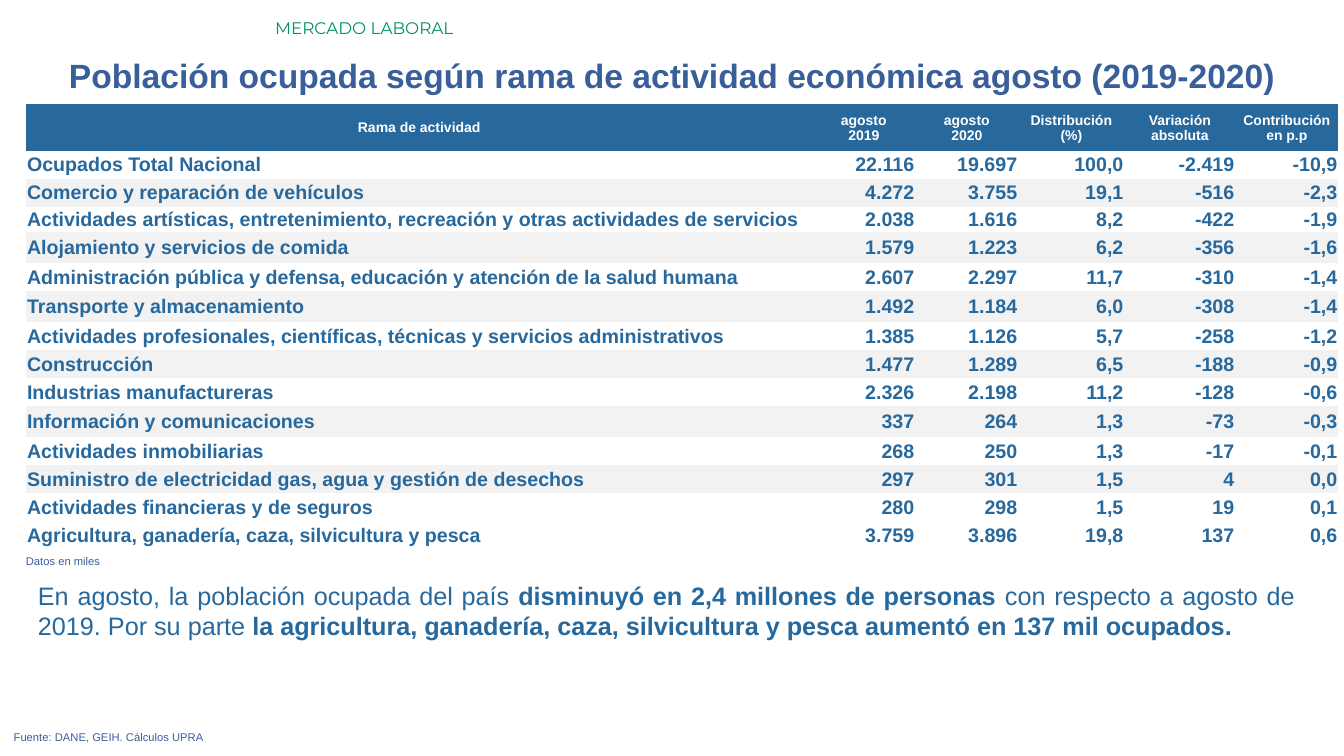
"""Build the slide on employed population by branch of economic activity."""
import pptx
import pptx.dml.color
import pptx.enum.text
import pptx.oxml.ns
import pptx.util

Pt = pptx.util.Pt
RGBColor = pptx.dml.color.RGBColor
ALIGN = pptx.enum.text.PP_ALIGN

GREEN = RGBColor(0x00, 0x92, 0x67)
INDIGO = RGBColor(0x39, 0x5F, 0x9B)
BLUE = RGBColor(0x27, 0x68, 0x9D)
WHITE = RGBColor(0xFF, 0xFF, 0xFF)
BAND = RGBColor(0xF2, 0xF2, 0xF2)
NO_STYLE = "{2D5ABB26-0587-4C30-8999-92F81FD0307C}"

SECTION = "MERCADO LABORAL"
TITLE = "Población ocupada según rama de actividad económica agosto (2019-2020)"
UNITS = "Datos en miles"
SUMMARY = (
    "En agosto, la población ocupada del país **disminuyó en 2,4 millones de personas **"
    "con respecto a agosto de 2019. Por su parte **la agricultura, ganadería, caza, "
    "silvicultura y pesca aumentó en 137 mil ocupados.**"
)
SOURCE = "Fuente: DANE, GEIH. Cálculos UPRA"

HEADER = ("Rama de actividad", "agosto\v2019", "agosto\v2020",
          "Distribución\n(%)", "Variación\nabsoluta", "Contribución\nen p.p")
BRANCHES = [
    ("Ocupados Total Nacional", "22.116", "19.697", "100,0", "-2.419", "-10,9"),
    ("Comercio y reparación de vehículos", "4.272", "3.755", "19,1", "-516", "-2,3"),
    ("Actividades artísticas, entretenimiento, recreación y otras actividades de servicios",
     "2.038", "1.616", "8,2", "-422", "-1,9"),
    ("Alojamiento y servicios de comida", "1.579", "1.223", "6,2", "-356", "-1,6"),
    ("Administración pública y defensa, educación y atención de la salud humana",
     "2.607", "2.297", "11,7", "-310", "-1,4"),
    ("Transporte y almacenamiento", "1.492", "1.184", "6,0", "-308", "-1,4"),
    ("Actividades profesionales, científicas, técnicas y servicios administrativos",
     "1.385", "1.126", "5,7", "-258", "-1,2"),
    ("Construcción", "1.477", "1.289", "6,5", "-188", "-0,9"),
    ("Industrias manufactureras", "2.326", "2.198", "11,2", "-128", "-0,6"),
    ("Información y comunicaciones", "337", "264", "1,3", "-73", "-0,3"),
    ("Actividades inmobiliarias", "268", "250", "1,3", "-17", "-0,1"),
    ("Suministro de electricidad gas, agua y gestión de desechos",
     "297", "301", "1,5", "4", "0,0"),
    ("Actividades financieras y de seguros", "280", "298", "1,5", "19", "0,1"),
    ("Agricultura, ganadería, caza, silvicultura y pesca",
     "3.759", "3.896", "19,8", "137", "0,6"),
]
COLUMN_WIDTHS = (561.6, 73.6, 73.6, 75.8, 79.2, 73.6)
ROW_HEIGHT = 20
SPECIAL_HEIGHTS = {0: 33, 3: 18, 4: 22.2, 6: 22.2, 10: 22.2}
LAST_BAND = 12


def write_text(frame, text, *, size, color, align=ALIGN.LEFT, bold=False, font="Arial"):
    """Fill a frame; newline splits paragraphs, \\v breaks lines, ** toggles bold."""
    for number, line in enumerate(text.split("\n")):
        paragraph = frame.add_paragraph() if number else frame.paragraphs[0]
        paragraph.alignment = align
        for part, piece in enumerate(line.split("\v")):
            if part:
                paragraph.add_line_break()
            for index, words in enumerate(piece.split("**")):
                if words:
                    run = paragraph.add_run()
                    run.text = words
                    run.font.name = font
                    run.font.size = Pt(size)
                    run.font.bold = bold or index % 2 == 1
                    run.font.color.rgb = color


def add_text(slide, bounds, text, **style):
    """Place a wrapping text box at left, top, width, height in points."""
    frame = slide.shapes.add_textbox(*map(Pt, bounds)).text_frame
    frame.word_wrap = True
    frame.auto_size = pptx.enum.text.MSO_AUTO_SIZE.SHAPE_TO_FIT_TEXT
    write_text(frame, text, **style)


def add_branch_table(slide, left, top):
    """Add the table of branches with its header and grey bands."""
    rows = [HEADER] + BRANCHES
    heights = [SPECIAL_HEIGHTS.get(number, ROW_HEIGHT) for number in range(len(rows))]
    graphic = slide.shapes.add_table(
        len(rows), len(HEADER), Pt(left), Pt(top), Pt(sum(COLUMN_WIDTHS)), Pt(sum(heights)))
    table = graphic.table
    table.first_row = table.horz_banding = False
    graphic.element.find(".//" + pptx.oxml.ns.qn("a:tableStyleId")).text = NO_STYLE
    for column, width in zip(table.columns, COLUMN_WIDTHS):
        column.width = Pt(width)
    for number, (values, height) in enumerate(zip(rows, heights)):
        table.rows[number].height = Pt(height)
        for position, value in enumerate(values):
            cell = table.cell(number, position)
            cell.margin_left = cell.margin_top = cell.margin_right = Pt(0.72)
            cell.margin_bottom = 0
            cell.vertical_anchor = pptx.enum.text.MSO_ANCHOR.MIDDLE
            if number == 0:
                size, color, align, fill = 10, WHITE, ALIGN.CENTER, BLUE
            else:
                size, color = 14, BLUE
                align = ALIGN.RIGHT if position else ALIGN.LEFT
                fill = BAND if number % 2 == 0 and number <= LAST_BAND else None
            if fill is None:
                cell.fill.background()
            else:
                cell.fill.solid()
                cell.fill.fore_color.rgb = fill
            write_text(cell.text_frame, value, size=size, color=color, align=align, bold=True)


def main():
    """Build and save the slide."""
    deck = pptx.Presentation()
    deck.slide_width, deck.slide_height = Pt(960), Pt(540)
    slide = deck.slides.add_slide(deck.slide_layouts[6])
    add_text(slide, (189.4, 9.4, 770.6, 21.6), SECTION, size=12, color=GREEN, font="Montserrat")
    add_text(slide, (0, 36, 960, 36), TITLE, size=24, color=INDIGO, align=ALIGN.CENTER, bold=True)
    add_text(slide, (20, 411, 912, 51), SUMMARY, size=18, color=BLUE, align=ALIGN.JUSTIFY)
    add_text(slide, (2.7, 518, 930, 17), SOURCE, size=8, color=INDIGO, align=ALIGN.JUSTIFY)
    add_branch_table(slide, 18.6, 74.6)
    add_text(slide, (11.4, 392.2, 930, 17), UNITS, size=8, color=INDIGO, align=ALIGN.JUSTIFY)
    deck.save("out.pptx")


if __name__ == "__main__":
    main()
